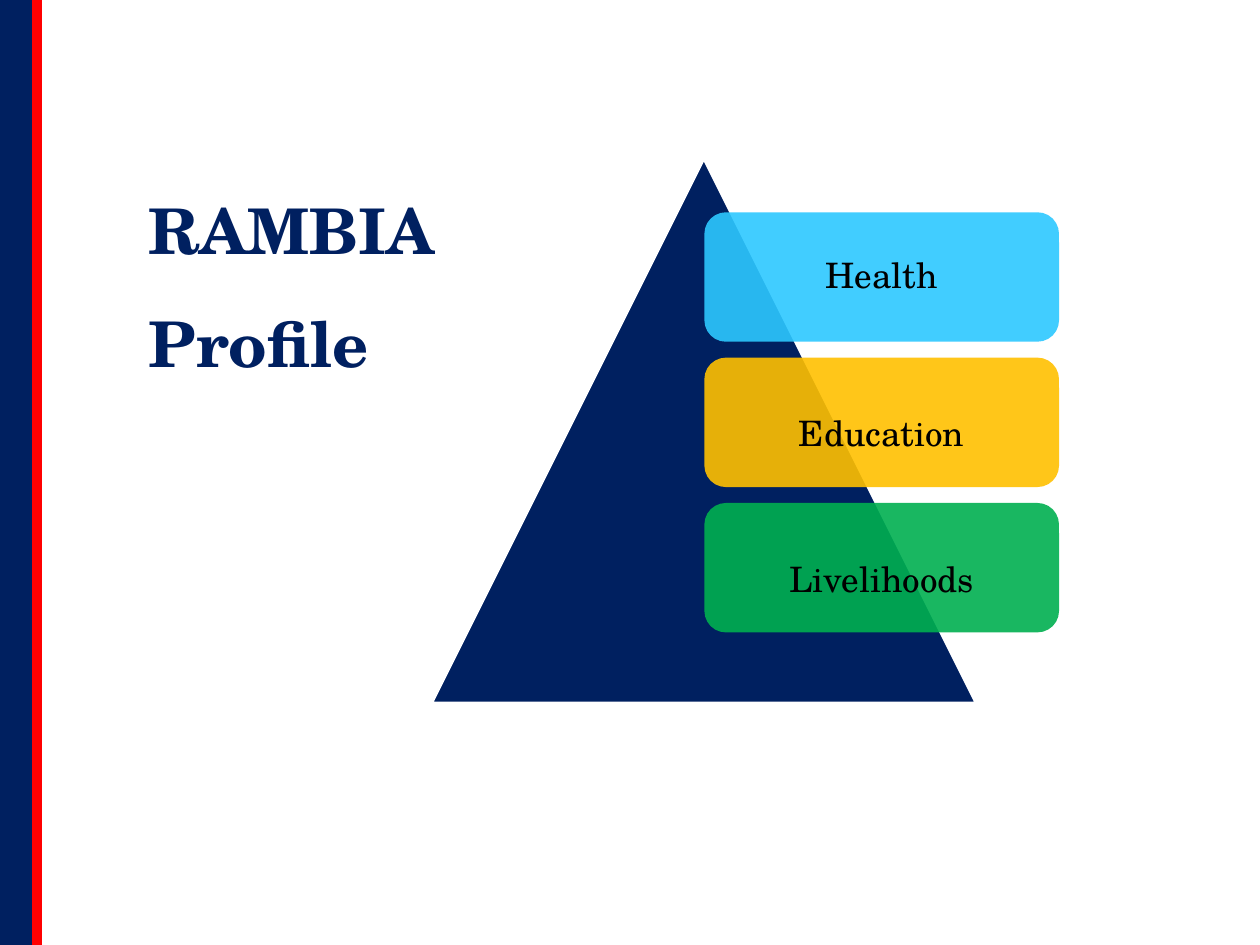
from lxml.etree import SubElement
from pptx import Presentation
from pptx.dml.color import RGBColor
from pptx.enum.shapes import MSO_SHAPE as Shape
from pptx.enum.text import MSO_ANCHOR as Anchor, MSO_AUTO_SIZE as AutoSize, PP_ALIGN as Align
from pptx.oxml.ns import qn
from pptx.util import Cm, Pt

FONT = "TeX Gyre Schola"
NAVY, RED, WHITE, BLACK = "002060", "FF0000", "FFFFFF", "000000"
WIDTH, HEIGHT = 25.4, 19.05
TITLE = "RAMBIA \vProfile"
TITLE_AREA = (2.74, 2.97, 8.46, 11.43)
SIDE_BARS = [(0, 0.64, NAVY), (0.64, 0.2, RED)]
TRIANGLE = (8.69, 3.18, 11, 11)
SECTORS = [("Health", "2DC8FF", 0.9, 9), ("Education", "FFC000", 1.5, 6),
           ("Livelihoods", "00B050", 1.5, 6)]
CARD_LEFT, CARD_TOP, CARD_WIDTH, CARD_HEIGHT, CARD_STEP = 14.2, 4.28, 7.15, 2.61, 2.93
OPACITY = 90
TITLE_FONT = {"name": FONT, "size": Pt(36), "bold": True}
CARD_FONT = {"name": FONT, "size": Pt(20), "bold": False}


def color(target, value):
    """Give a font or fill a hex colour."""
    if hasattr(target, "solid"):
        target.solid()
        target.fore_color.rgb = RGBColor.from_string(value)
    else:
        target.color.rgb = RGBColor.from_string(value)


def add_box(page, kind, area, fill):
    """Add a filled shape without outline or shadow."""
    box = page.shapes.add_shape(kind, *map(Cm, area))
    box.shadow.inherit = False
    color(box.fill, fill)
    box.line.fill.background()
    return box


def write(box, text, font, ink, anchor, paragraph_format):
    """Write one formatted paragraph into a shape."""
    frame = box.text_frame
    frame.word_wrap = True
    frame.auto_size = AutoSize.NONE
    frame.vertical_anchor = anchor
    frame.text = text
    para = frame.paragraphs[0]
    for name, value in paragraph_format.items():
        setattr(para, name, value)
    for span in para.runs:
        for name, value in font.items():
            setattr(span.font, name, value)
        color(span.font, ink)


def add_title(page):
    """Place and fill the title placeholder."""
    title = page.shapes.title
    title.left, title.top, title.width, title.height = map(Cm, TITLE_AREA)
    write(title, TITLE, TITLE_FONT, NAVY, Anchor.TOP,
          {"alignment": Align.LEFT, "line_spacing": 1.5, "space_after": Pt(6)})


def add_pyramid(page):
    """Draw the triangle and the translucent sector cards."""
    triangle = add_box(page, Shape.ISOSCELES_TRIANGLE, TRIANGLE, NAVY)
    color(triangle.line.fill, WHITE)
    triangle.line.width = Pt(2)
    for index, (label, fill, spacing, after) in enumerate(SECTORS):
        area = (CARD_LEFT, CARD_TOP + index * CARD_STEP, CARD_WIDTH, CARD_HEIGHT)
        card = add_box(page, Shape.ROUNDED_RECTANGLE, area, fill)
        tint = next(card.fill._xPr.iter(qn("a:srgbClr")))
        SubElement(tint, qn("a:alpha"), val=str(OPACITY * 1000))
        write(card, label, CARD_FONT, BLACK, Anchor.MIDDLE,
              {"alignment": Align.CENTER, "line_spacing": spacing, "space_after": Pt(after)})


def main():
    """Build the profile slide."""
    deck = Presentation()
    deck.slide_width, deck.slide_height = Cm(WIDTH), Cm(HEIGHT)
    page = deck.slides.add_slide(deck.slide_layouts.get_by_name("Title Only"))
    for left, width, fill in SIDE_BARS:
        add_box(page, Shape.FLOWCHART_PROCESS, (left, 0, width, HEIGHT), fill)
    add_title(page)
    add_pyramid(page)
    deck.save("out.pptx")


if __name__ == "__main__":
    main()
